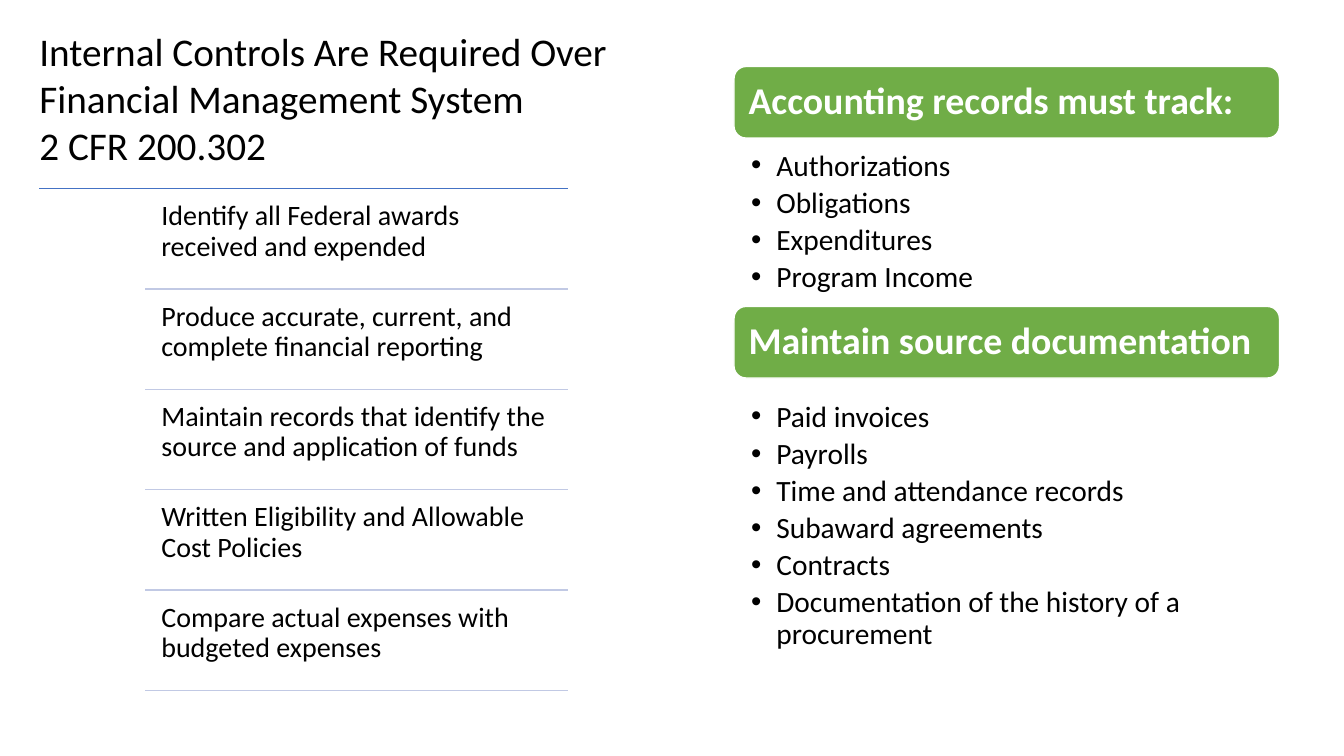
from lxml.etree import SubElement
from pptx import Presentation
from pptx.dml.color import RGBColor
from pptx.enum.shapes import MSO_CONNECTOR, MSO_SHAPE
from pptx.enum.text import MSO_ANCHOR as Anchor, PP_ALIGN as Align
from pptx.oxml.ns import qn
from pptx.util import Inches, Pt

COLORS = {"text": "000000", "rule": "4472C4", "divider": "C1C9E4",
          "heading": "70AD47", "white": "FFFFFF"}
FONT = "Calibri"

REQUIREMENTS = [
    "Identify all Federal awards received and expended",
    "Produce accurate, current, and complete financial reporting",
    "Maintain records that identify the source and application of funds",
    "Written Eligibility and Allowable Cost Policies",
    "Compare actual expenses with budgeted expenses",
]
TRACKED = ["Authorizations", "Obligations", "Expenditures", "Program Income"]
DOCUMENTS = ["Paid invoices", "Payrolls", "Time and attendance records",
             "Subaward agreements", "Contracts",
             "Documentation of the history of a procurement"]


def color(name):
    """Return the named colour."""
    return RGBColor.from_string(COLORS[name])


def set_frame(frame, margins, anchor):
    """Wrap a text frame and set its left, top, right and bottom margins."""
    frame.word_wrap = True
    frame.vertical_anchor = anchor
    (frame.margin_left, frame.margin_top,
     frame.margin_right, frame.margin_bottom) = map(Inches, margins)


def write(frame, lines, size, shade="text", bold=False, spacing=0.9, after=0, bullet=False):
    """Write one left-aligned paragraph for each line."""
    for index, line in enumerate(lines):
        paragraph = frame.add_paragraph() if index else frame.paragraphs[0]
        if bullet:
            paragraph.level = 1
            properties = paragraph._p.get_or_add_pPr()
            properties.set("marL", str(Inches(0.25)))
            properties.set("indent", str(Inches(-0.25)))
            SubElement(properties, qn("a:buFont")).set("typeface", "Arial")
            SubElement(properties, qn("a:buChar")).set("char", "•")
        paragraph.alignment = Align.LEFT
        paragraph.line_spacing = spacing
        paragraph.space_before = Pt(0)
        paragraph.space_after = Pt(after)
        run = paragraph.add_run()
        run.text = line
        run.font.name = FONT
        run.font.size = Pt(size)
        run.font.bold = bold
        run.font.color.rgb = color(shade)


def add_rule(slide, left, right, top, shade):
    """Draw a horizontal rule."""
    rule = slide.shapes.add_connector(MSO_CONNECTOR.STRAIGHT, Inches(left), Inches(top),
                                      Inches(right), Inches(top))
    rule.line.color.rgb = color(shade)
    rule.line.width = Pt(1)
    SubElement(rule._element.spPr, qn("a:effectLst"))


def add_title(slide, left, top, width, height):
    """Place and fill the slide title."""
    title = slide.shapes.title
    title.left, title.top, title.width, title.height = map(Inches, (left, top, width, height))
    set_frame(title.text_frame, (0.1, 0.05, 0.1, 0.05), Anchor.TOP)
    write(title.text_frame, ["Internal Controls Are Required Over Financial Management System",
                             "2 CFR 200.302"], 28, spacing=1)


def add_requirements(slide, left, top, width, height):
    """List the requirements, each closed by a divider, under a full-width rule."""
    right = left + width
    pitch = height / len(REQUIREMENTS)
    add_rule(slide, left, right, top, "rule")
    for index, requirement in enumerate(REQUIREMENTS):
        row_top = top + index * pitch
        box = slide.shapes.add_textbox(Inches(left + 1.13), Inches(row_top + 0.05),
                                       Inches(width - 1.13), Inches(pitch - 0.05))
        set_frame(box.text_frame, (0.08,) * 4, Anchor.TOP)
        write(box.text_frame, [requirement], 20, after=7)
        add_rule(slide, left + 1.05, right, row_top + pitch, "divider")


def add_topic(slide, heading, items, left, top, width, height):
    """Place a green heading bar above its bulleted items."""
    bar_height = 0.71
    bar = slide.shapes.add_shape(MSO_SHAPE.ROUNDED_RECTANGLE, Inches(left), Inches(top),
                                 Inches(width), Inches(bar_height))
    bar.shadow.inherit = False
    bar.fill.solid()
    bar.fill.fore_color.rgb = color("heading")
    bar.line.color.rgb = color("white")
    bar.line.width = Pt(1)
    set_frame(bar.text_frame, (0.11,) * 4, Anchor.MIDDLE)
    write(bar.text_frame, [heading], 27, "white", bold=True)
    details = slide.shapes.add_textbox(Inches(left), Inches(top + bar_height),
                                       Inches(width), Inches(height - bar_height))
    set_frame(details.text_frame, (0.17, 0.04, 0.21, 0.04), Anchor.MIDDLE)
    write(details.text_frame, items, 21, after=3.8, bullet=True)


def main():
    """Build and save the slide."""
    deck = Presentation()
    deck.slide_width, deck.slide_height = Inches(13.33), Inches(7.5)
    slide = deck.slides.add_slide(deck.slide_layouts[5])
    add_title(slide, 0.29, 0.22, 6.72, 1.51)
    add_requirements(slide, 0.39, 1.87, 5.24, 4.98)
    add_topic(slide, "Accounting records must track:", TRACKED, 7.28, 0.66, 5.41, 2.38)
    add_topic(slide, "Maintain source documentation", DOCUMENTS, 7.28, 3.04, 5.41, 3.65)
    deck.save("out.pptx")


if __name__ == "__main__":
    main()
